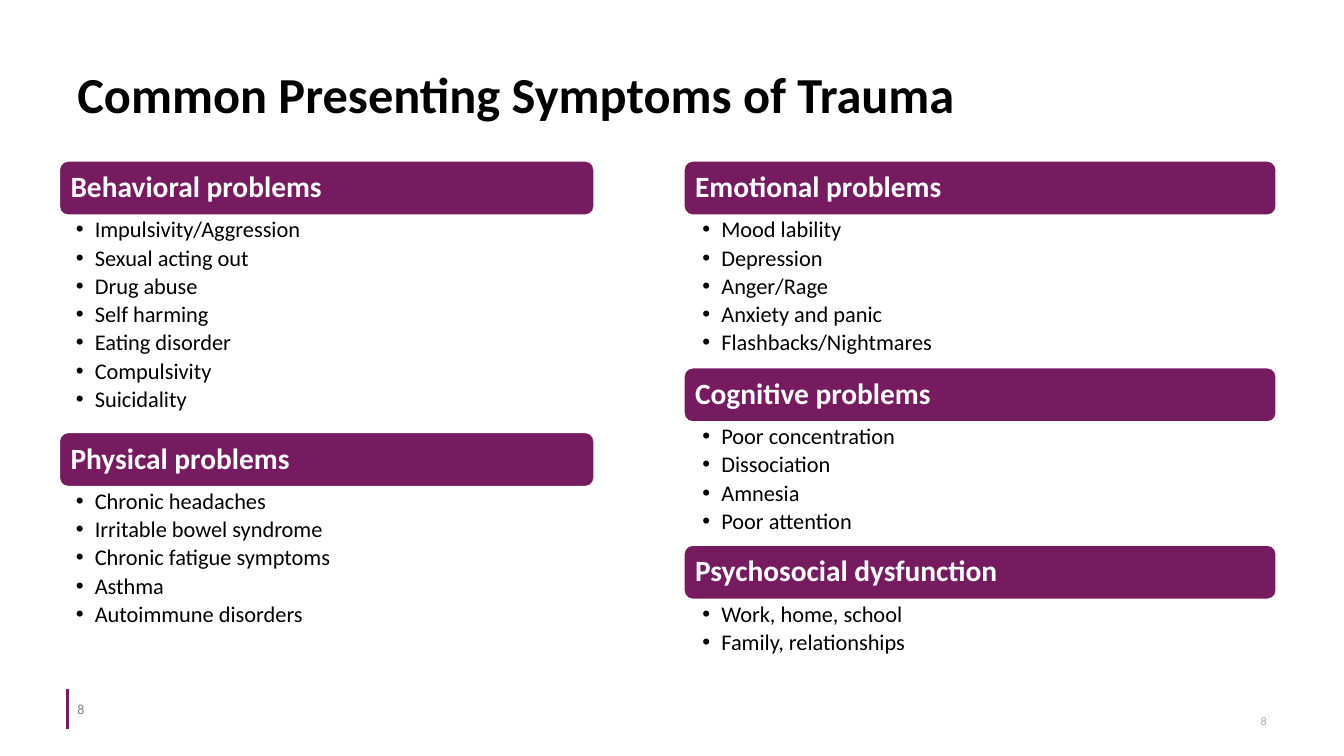
from dataclasses import dataclass

from lxml import etree
from pptx import Presentation
from pptx import util as u
from pptx.dml import color
from pptx.enum import shapes, text
from pptx.oxml import ns

PLUM, WHITE, BLACK = "771B61", "FFFFFF", "000000"
HEADING_HEIGHT = 1.4
COLUMNS_TOP = 4.04
BULLET_INDENT = 0.48


@dataclass
class Group:
    heading: str
    list_height: float
    symptoms: list[str]


@dataclass
class Column:
    left: float
    width: float
    list_inset: float
    groups: list[Group]


COLUMNS = [
    Column(1.48, 13.51, 0.43, [
        Group("Behavioral problems", 5.44, [
            "Impulsivity/Aggression", "Sexual acting out", "Drug abuse",
            "Self harming", "Eating disorder", "Compulsivity", "Suicidality"]),
        Group("Physical problems", 3.81, [
            "Chronic headaches", "Irritable bowel syndrome",
            "Chronic fatigue symptoms", "Asthma", "Autoimmune disorders"]),
    ]),
    Column(17.22, 14.96, 0.48, [
        Group("Emotional problems", 3.81, [
            "Mood lability", "Depression", "Anger/Rage", "Anxiety and panic",
            "Flashbacks/Nightmares"]),
        Group("Cognitive problems", 3.07, [
            "Poor concentration", "Dissociation", "Amnesia", "Poor attention"]),
        Group("Psychosocial dysfunction", 1.55, [
            "Work, home, school", "Family, relationships"]),
    ]),
]


def rgb(value: str) -> color.RGBColor:
    return color.RGBColor.from_string(value)


def add_span(para, words: str, size: float, ink: str, bold: bool = False,
             face: str = "Calibri") -> None:
    span = para.add_run()
    span.text = words
    span.font.name = face
    span.font.size = u.Pt(size)
    span.font.bold = bold
    span.font.color.rgb = rgb(ink)


def set_insets(frame, left: float, top: float, right: float, bottom: float) -> None:
    frame.margin_left, frame.margin_top = u.Cm(left), u.Cm(top)
    frame.margin_right, frame.margin_bottom = u.Cm(right), u.Cm(bottom)


def add_box(page, left: float, top: float, width: float, height: float,
            anchor=text.MSO_ANCHOR.MIDDLE):
    box = page.shapes.add_textbox(u.Cm(left), u.Cm(top), u.Cm(width), u.Cm(height))
    box.text_frame.word_wrap = True
    box.text_frame.vertical_anchor = anchor
    return box.text_frame


def add_bullet(para) -> None:
    props = para._p.get_or_add_pPr()
    indent = u.Cm(BULLET_INDENT)
    props.set("marL", str(indent))
    props.set("indent", str(-indent))
    etree.SubElement(props, ns.qn("a:buFont"), typeface="Arial")
    etree.SubElement(props, ns.qn("a:buChar"), char="•")


def add_heading(page, column: Column, top: float, words: str) -> None:
    bar = page.shapes.add_shape(
        shapes.MSO_SHAPE.ROUNDED_RECTANGLE, u.Cm(column.left), u.Cm(top),
        u.Cm(column.width), u.Cm(HEADING_HEIGHT))
    bar.shadow.inherit = False
    bar.fill.solid()
    bar.fill.fore_color.rgb = rgb(PLUM)
    bar.line.color.rgb = rgb(WHITE)
    bar.line.width = u.Pt(2)
    frame = bar.text_frame
    frame.word_wrap = True
    frame.vertical_anchor = text.MSO_ANCHOR.MIDDLE
    set_insets(frame, 0.23, 0.1, 0.23, 0.1)
    para = frame.paragraphs[0]
    para.alignment = text.PP_ALIGN.LEFT
    para.line_spacing = 0.9
    add_span(para, words, 21, WHITE, bold=True)


def add_symptoms(page, column: Column, top: float, group: Group) -> None:
    frame = add_box(page, column.left, top, column.width, group.list_height,
                    text.MSO_ANCHOR.TOP)
    set_insets(frame, column.list_inset, 0.07, 0.4, 0.07)
    for index, symptom in enumerate(group.symptoms):
        para = frame.add_paragraph() if index else frame.paragraphs[0]
        add_bullet(para)
        para.line_spacing = 0.9
        para.space_after = u.Pt(2.9)
        add_span(para, symptom, 16, BLACK)


def add_column(page, column: Column) -> None:
    top = COLUMNS_TOP
    for group in column.groups:
        add_heading(page, column, top, group.heading)
        top += HEADING_HEIGHT
        add_symptoms(page, column, top, group)
        top += group.list_height


def add_page_numbers(page) -> None:
    frame = add_box(page, 1.7, 17.35, 1.55, 1.02)
    add_span(frame.paragraphs[0], "8", 10, "808080")

    rule = page.shapes.add_connector(
        shapes.MSO_CONNECTOR.STRAIGHT, u.Cm(1.7), u.Cm(18.36), u.Cm(1.7), u.Cm(17.35))
    rule.line.color.rgb = rgb(PLUM)
    rule.line.width = u.Pt(2.25)
    etree.SubElement(rule._element.spPr, ns.qn("a:effectLst"))

    frame = add_box(page, 24.28, 17.65, 7.9, 1.02)
    para = frame.paragraphs[0]
    para.alignment = text.PP_ALIGN.RIGHT
    para.space_after = u.Pt(6)
    add_span(para, "8", 8, "8C8C8C", face="Quicksand")


def main() -> None:
    deck = Presentation()
    deck.slide_width, deck.slide_height = u.Cm(33.87), u.Cm(19.05)
    page = deck.slides.add_slide(deck.slide_layouts[6])

    # Page numbers and accent rule
    add_page_numbers(page)

    # Title
    title = add_box(page, 1.7, 0.76, 30.48, 3.18)
    add_span(title.paragraphs[0], "Common Presenting Symptoms of Trauma", 36, BLACK,
             bold=True)

    # Symptom columns
    for column in COLUMNS:
        add_column(page, column)

    deck.save("out.pptx")


if __name__ == "__main__":
    main()
